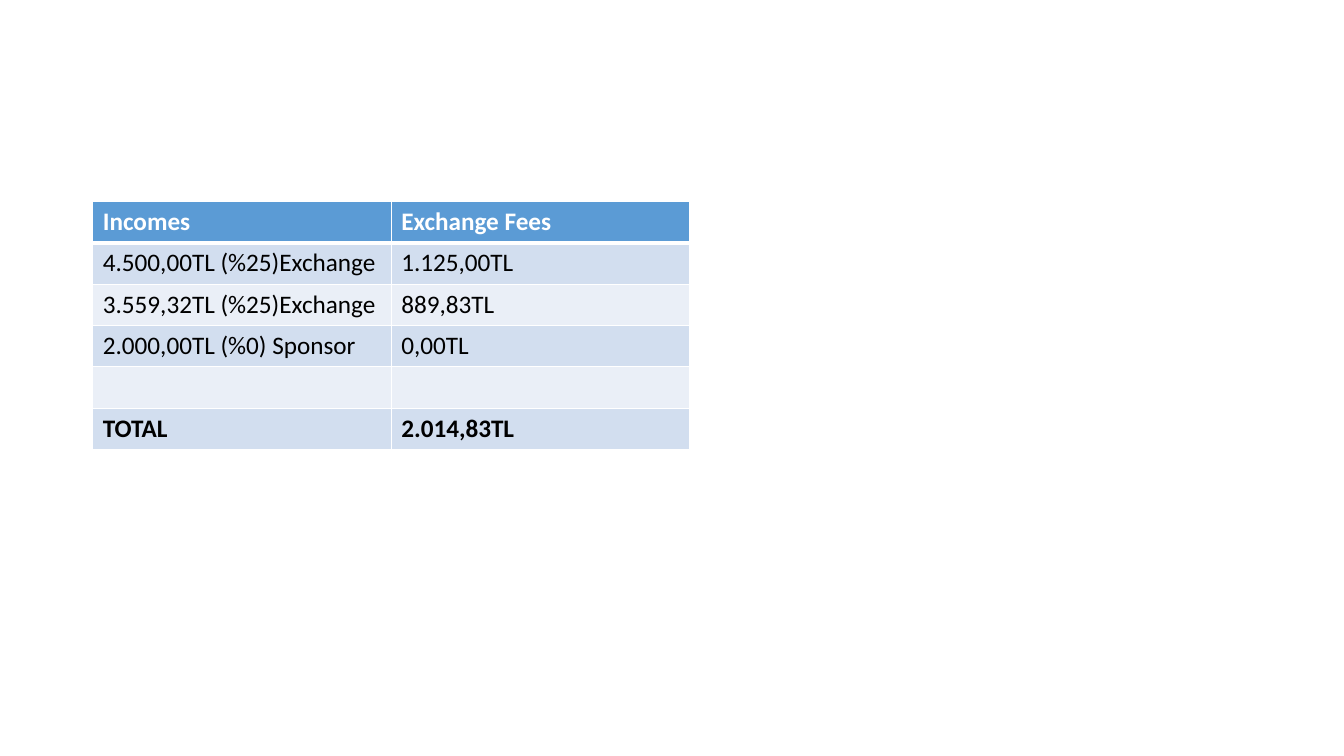
import dataclasses

import lxml.etree
import pptx
import pptx.dml.color
import pptx.oxml.ns
import pptx.util
from pptx.util import Inches


@dataclasses.dataclass(frozen=True)
class Theme:
    """Colours, type and line widths of the slide."""
    font: str = "Calibri"
    size: float = 18
    header_fill: str = "5B9BD5"
    band_fills: tuple = ("D2DEEF", "EAEFF7")
    header_text: str = "FFFFFF"
    body_text: str = "000000"
    border: str = "FFFFFF"
    thin: float = 1
    thick: float = 3


THEME = Theme()

FEES = [
    ("Incomes", "Exchange Fees"),
    ("4.500,00TL (%25)Exchange", "1.125,00TL"),
    ("3.559,32TL (%25)Exchange", "889,83TL"),
    ("2.000,00TL (%0) Sponsor", "0,00TL"),
    ("", ""),
    ("TOTAL", "2.014,83TL"),
]


def rgb(value):
    """Return the colour for a hex string."""
    return pptx.dml.color.RGBColor.from_string(value)


def write_text(frame, text, *, color, bold=False, size=THEME.size):
    """Write one formatted run into a text frame."""
    run = frame.paragraphs[0].add_run()
    run.text = text
    run.font.name = THEME.font
    run.font.size = pptx.util.Pt(size)
    run.font.bold = bold
    run.font.color.rgb = rgb(color)


def set_borders(cell, top, bottom):
    """Draw the four borders of a cell, with top and bottom widths in points."""
    qn = pptx.oxml.ns.qn
    properties = cell._tc.get_or_add_tcPr()
    widths = {"a:lnL": THEME.thin, "a:lnR": THEME.thin, "a:lnT": top, "a:lnB": bottom}
    for edge, width in widths.items():
        line = lxml.etree.SubElement(properties, qn(edge), w=str(pptx.util.Pt(width)))
        fill = lxml.etree.SubElement(line, qn("a:solidFill"))
        lxml.etree.SubElement(fill, qn("a:srgbClr"), val=THEME.border)


def fill_cell(cell, color):
    """Give a cell a solid fill."""
    cell.fill.solid()
    cell.fill.fore_color.rgb = rgb(color)


def add_fee_table(slide, rows, left, top, column_width, row_height):
    """Add a banded table with a header row and a bold last row."""
    columns = len(rows[0])
    fee_table = slide.shapes.add_table(
        len(rows), columns, left, top, column_width * columns, row_height * len(rows)
    ).table
    last = len(rows) - 1
    for index, values in enumerate(rows):
        is_header = index == 0
        fill = THEME.header_fill if is_header else THEME.band_fills[(index - 1) % 2]
        color = THEME.header_text if is_header else THEME.body_text
        for column, value in enumerate(values):
            cell = fee_table.cell(index, column)
            set_borders(
                cell,
                top=THEME.thick if index == 1 else THEME.thin,
                bottom=THEME.thick if is_header else THEME.thin,
            )
            fill_cell(cell, fill)
            if value:
                write_text(cell.text_frame, value, color=color, bold=index in (0, last))


def main():
    """Build the slide and save it."""
    deck = pptx.Presentation()
    deck.slide_width, deck.slide_height = Inches(13.33), Inches(7.5)
    slide = deck.slides.add_slide(deck.slide_layouts[6])
    add_fee_table(
        slide, FEES, Inches(0.92), Inches(2),
        column_width=Inches(2.96), row_height=Inches(0.41),
    )
    deck.save("out.pptx")


if __name__ == "__main__":
    main()
